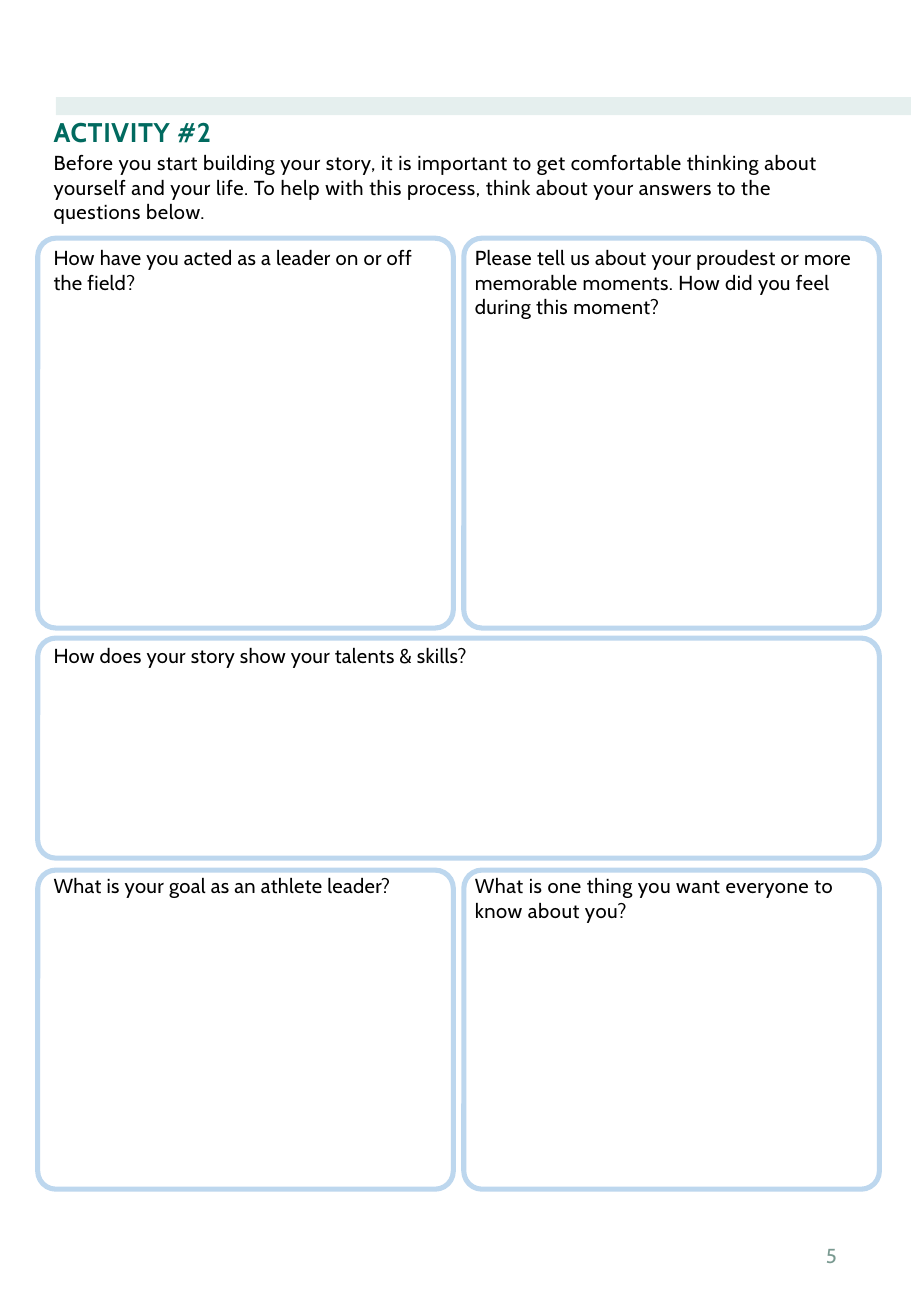
import pptx
import pptx.dml.color
import pptx.enum.shapes
import pptx.enum.text
import pptx.oxml
import pptx.util
from pptx.util import Cm

GREEN, BLUE, BLACK, GREY_GREEN = "016A5F", "BDD7EE", "000000", "7A9A91"


def color(hex_text):
    return pptx.dml.color.RGBColor.from_string(hex_text)


def write(box, text, size, text_color, spacing=0, bold=False):
    """Fill a box that has no margins with one paragraph; spacing is in points."""
    frame = box.text_frame
    frame.word_wrap = True
    frame.auto_size = pptx.enum.text.MSO_AUTO_SIZE.NONE
    frame.vertical_anchor = pptx.enum.text.MSO_ANCHOR.TOP
    frame.margin_left = frame.margin_top = frame.margin_right = frame.margin_bottom = 0
    para = frame.paragraphs[0]
    para.alignment = pptx.enum.text.PP_ALIGN.LEFT
    para.line_spacing = 1.01
    span = para.add_run()
    span.text = text
    span.font.name = "Cabin"
    span.font.size = pptx.util.Pt(size)
    span.font.bold = bold
    span.font.color.rgb = color(text_color)
    span.font._element.set("spc", str(round(spacing * 100)))


deck = pptx.Presentation()
deck.slide_width, deck.slide_height = Cm(19.05), Cm(27.51)
page = deck.slides.add_slide(deck.slide_layouts[5])

# Band across the top, running off to the right edge
band = page.shapes.add_shape(
    pptx.enum.shapes.MSO_SHAPE.RECTANGLE, Cm(1.17), Cm(2.03), Cm(17.88), Cm(0.38))
band.shadow.inherit = False
band.line.fill.background()
band.fill.solid()
band.fill.fore_color.rgb = color(GREEN)
band_color = band.fill._xPr.find(".//" + pptx.oxml.ns.qn("a:srgbClr"))
pptx.oxml.xmlchemy.OxmlElement("a:alpha")
alpha = pptx.oxml.xmlchemy.OxmlElement("a:alpha")
alpha.set("val", "10000")
band_color.append(alpha)

# Heading and introduction
title = page.shapes.title
title.left, title.top, title.width, title.height = Cm(1.12), Cm(2.41), Cm(16.9), Cm(0.7)
write(title, "ACTIVITY #2", 16, GREEN, 0.4, bold=True)
intro = page.shapes.add_textbox(Cm(1.12), Cm(3.14), Cm(16.9), Cm(1.55))
write(intro, "Before you start building your story, it is important to get comfortable "
      "thinking about yourself and your life. To help with this process, think about "
      "your answers to the questions below.", 12, BLACK, 0.35)

# Answer panels on a two-column grid
LEFT, COLUMN, GAP, RADIUS = 0.79, 8.69, 0.22, 0.38
RIGHT = LEFT + COLUMN + GAP
FULL = 2 * COLUMN + GAP
TEXT_LEFT = {LEFT: 1.12, RIGHT: 9.93}
# panel left, top, width, height; text top, width, letter spacing; question
panels = [
    (LEFT, 4.98, COLUMN, 8.15, 5.13, 7.75, 0.2,
     "How have you acted as a leader on or off the field?"),
    (RIGHT, 4.98, COLUMN, 8.15, 5.13, 8.1, 0.25,
     "Please tell us about your proudest or more memorable moments. "
     "How did you feel during this moment?"),
    (LEFT, 13.34, FULL, 4.6, 13.44, 9.4, 0.17,
     "How does your story show your talents & skills?"),
    (LEFT, 18.19, COLUMN, 6.67, 18.26, 7.75, 0.2,
     "What is your goal as an athlete leader?"),
    (RIGHT, 18.19, COLUMN, 6.67, 18.26, 7.9, 0.3,
     "What is one thing you want everyone to know about you?"),
]
for left, top, width, height, text_top, text_width, spacing, question in panels:
    panel = page.shapes.add_shape(
        pptx.enum.shapes.MSO_SHAPE.ROUNDED_RECTANGLE,
        Cm(left), Cm(top), Cm(width), Cm(height))
    panel.adjustments[0] = RADIUS / min(width, height)
    panel.shadow.inherit = False
    panel.fill.background()
    panel.line.color.rgb = color(BLUE)
    panel.line.width = pptx.util.Pt(3)
    box = page.shapes.add_textbox(
        Cm(TEXT_LEFT[left]), Cm(text_top), Cm(text_width), Cm(1.6))
    write(box, question, 12, BLACK, spacing)

# Page number
number = page.shapes.add_textbox(Cm(13.46), Cm(25.5), Cm(4.04), Cm(1.47))
write(number, "5", 12, GREY_GREEN)
number.text_frame.vertical_anchor = pptx.enum.text.MSO_ANCHOR.MIDDLE
number.text_frame.paragraphs[0].alignment = pptx.enum.text.PP_ALIGN.RIGHT

deck.save("out.pptx")
